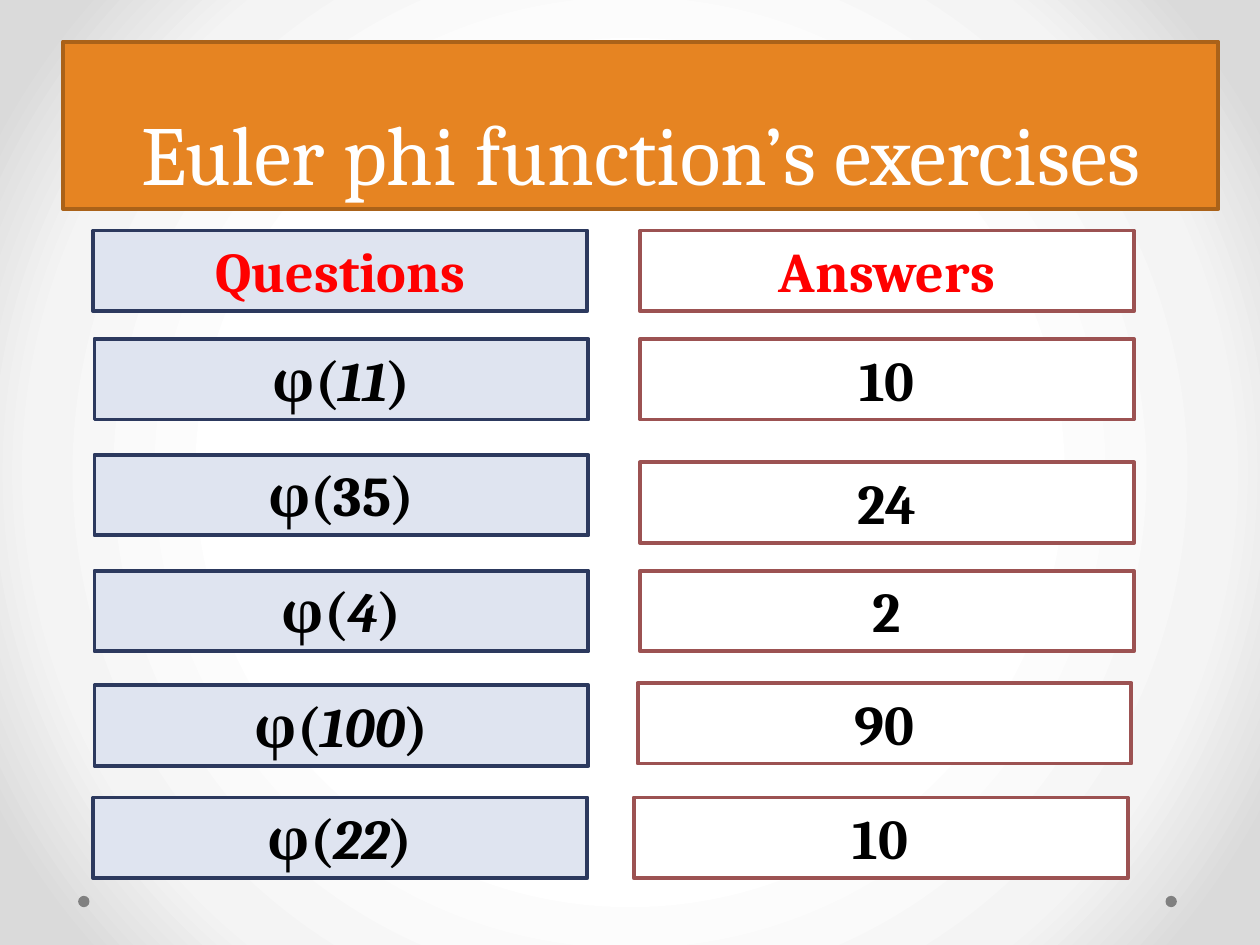
"""Build the slide of Euler phi exercises with their answers."""
from lxml import etree
from pptx import Presentation, util as u
from pptx.dml.color import RGBColor
from pptx.enum import shapes, text
from pptx.oxml.ns import qn

WHITE = RGBColor(0xFF, 0xFF, 0xFF)
BLACK = RGBColor(0, 0, 0)
RED = RGBColor(0xFF, 0, 0)
GRAY = RGBColor(0x80, 0x80, 0x80)
ORANGE = RGBColor(0xE6, 0x84, 0x22)
BROWN = RGBColor(0xAA, 0x62, 0x19)
PALE_BLUE = RGBColor(0xDF, 0xE4, 0xF0)
NAVY = RGBColor(0x2C, 0x39, 0x5E)
MAROON = RGBColor(0x9C, 0x52, 0x52)
BACKGROUND_STOPS = [(50, WHITE), (76, RGBColor(0xF4, 0xF4, 0xF4)),
                    (92, RGBColor(0xDA, 0xDA, 0xDA))]

FONT = "Cambria"
CELL_SIZE = (3.92, 0.64)
QUESTIONS = [
    (0.74, 1.83, ["Questions"]),
    (0.75, 2.69, ["φ(", "11", ")"]),
    (0.75, 3.61, ["φ(35)"]),
    (0.75, 4.53, ["φ(", "4", ")"]),
    (0.75, 5.44, ["φ(", "100", ")"]),
    (0.74, 6.33, ["φ(", "22", ")"]),
]
ANSWERS = [
    (5.08, 1.83, ["Answers"]),
    (5.08, 2.69, ["10"]),
    (5.08, 3.67, ["24"]),
    (5.08, 4.53, ["2"]),
    (5.06, 5.42, ["90"]),
    (5.03, 6.33, ["10"]),
]


def apply(target, **values):
    """Set every given attribute on the target."""
    for name, value in values.items():
        setattr(target, name, value)


def paint(shape, fill, line=None):
    """Give a shape a solid fill and an optional outline."""
    shape.fill.solid()
    shape.fill.fore_color.rgb = fill
    if line is None:
        shape.line.fill.background()
    else:
        shape.line.color.rgb = line
        shape.line.width = u.Pt(2.25)


def write(para, pieces, size, color, bold=False):
    """Write centred text, with every second piece in italics."""
    para.alignment = text.PP_ALIGN.CENTER
    for index, piece in enumerate(pieces):
        span = para.add_run()
        span.text = piece
        apply(span.font, name=FONT, size=u.Pt(size), bold=bold, italic=index % 2 == 1)
        span.font.color.rgb = color


def add_background(page):
    """Fill the page with a circular gradient around its centre."""
    page.background.fill.gradient()
    gradient = page.element.find(".//" + qn("a:gradFill"))
    gradient.clear()
    stops = etree.SubElement(gradient, qn("a:gsLst"))
    for share, color in BACKGROUND_STOPS:
        stop = etree.SubElement(stops, qn("a:gs"), pos=str(share * 1000))
        etree.SubElement(stop, qn("a:srgbClr"), val=str(color))
    circle = etree.SubElement(gradient, qn("a:path"), {"path": "circle"})
    etree.SubElement(circle, qn("a:fillToRect"), dict.fromkeys("ltrb", "50000"))


def add_title(page, words):
    """Place the heading in its orange band."""
    box = page.shapes.title
    apply(box, left=u.Inches(0.5), top=u.Inches(0.33),
          width=u.Inches(9.17), height=u.Inches(1.33))
    paint(box, ORANGE, BROWN)
    apply(box.text_frame, vertical_anchor=text.MSO_ANCHOR.BOTTOM,
          auto_size=text.MSO_AUTO_SIZE.NONE, word_wrap=True)
    para = box.text_frame.paragraphs[0]
    para.line_spacing = u.Pt(58)
    write(para, [words], 48, WHITE)


def add_shape(page, kind, left, top, width, height):
    """Add a preset shape without a shadow."""
    shape = page.shapes.add_shape(kind, *map(u.Inches, (left, top, width, height)))
    shape.shadow.inherit = False
    return shape


def add_column(page, cells, fill, line):
    """Stack a red heading and its black entries in boxes."""
    for row, (left, top, pieces) in enumerate(cells):
        box = add_shape(page, shapes.MSO_SHAPE.RECTANGLE, left, top, *CELL_SIZE)
        paint(box, fill, line)
        apply(box.text_frame, word_wrap=True, vertical_anchor=text.MSO_ANCHOR.TOP,
              auto_size=text.MSO_AUTO_SIZE.SHAPE_TO_FIT_TEXT)
        write(box.text_frame.paragraphs[0], pieces, 32, BLACK if row else RED, bold=True)


def main():
    """Assemble and save the deck."""
    deck = Presentation()
    apply(deck, slide_width=u.Inches(10), slide_height=u.Inches(7.5))
    page = deck.slides.add_slide(deck.slide_layouts.get_by_name("Title Only"))
    add_background(page)
    for left in (0.62, 9.25):
        paint(add_shape(page, shapes.MSO_SHAPE.OVAL, left, 7.11, 0.09, 0.09), GRAY)
    add_title(page, "Euler phi function’s exercises")
    add_column(page, QUESTIONS, PALE_BLUE, NAVY)
    add_column(page, ANSWERS, WHITE, MAROON)
    deck.save("out.pptx")


if __name__ == "__main__":
    main()
